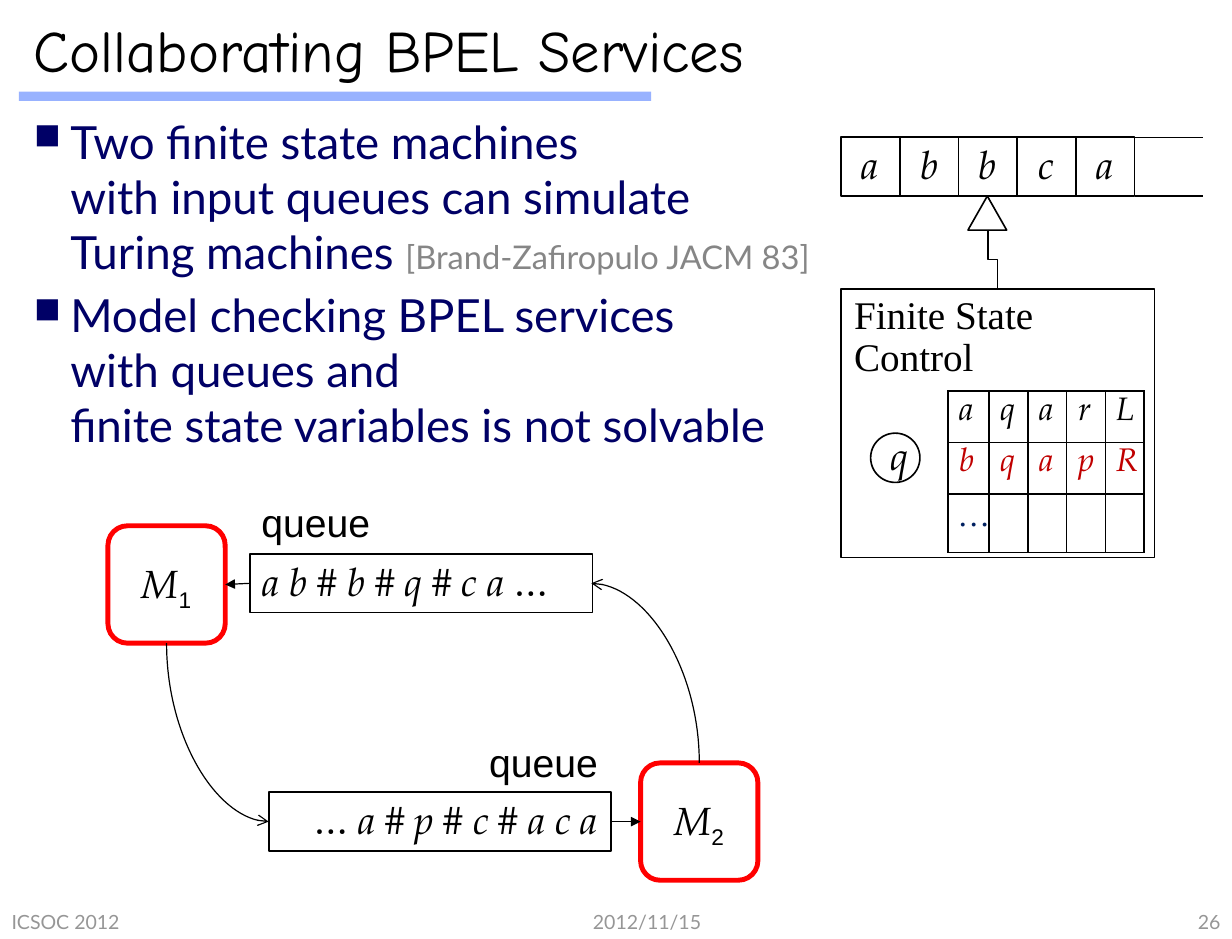
from lxml import etree
from pptx import Presentation
from pptx.dml.color import RGBColor
from pptx.enum.shapes import MSO_CONNECTOR, MSO_SHAPE
from pptx.enum.text import MSO_ANCHOR, PP_ALIGN
from pptx.oxml.ns import qn
from pptx.util import Inches, Pt

LEFT, CENTER, RIGHT = PP_ALIGN.LEFT, PP_ALIGN.CENTER, PP_ALIGN.RIGHT
TOP, MIDDLE = MSO_ANCHOR.TOP, MSO_ANCHOR.MIDDLE
RECT, ROUNDED = MSO_SHAPE.RECTANGLE, MSO_SHAPE.ROUNDED_RECTANGLE
OVAL, TRIANGLE = MSO_SHAPE.OVAL, MSO_SHAPE.ISOSCELES_TRIANGLE
STRAIGHT, ELBOW, CURVE = MSO_CONNECTOR.STRAIGHT, MSO_CONNECTOR.ELBOW, MSO_CONNECTOR.CURVE

COLORS = {"black": "000000", "white": "FFFFFF", "bar": "3366FF", "body": "000066",
          "citation": "868686", "footer": "969696", "machine": "FF0000",
          "active": "C00000", "more": "002060"}
COLORS = {name: RGBColor.from_string(value) for name, value in COLORS.items()}
MATH, SERIF, SANS, LATO = "TeX Gyre Pagella", "Times New Roman", "Arial", "Lato"

prs = Presentation()
prs.slide_width, prs.slide_height = Inches(10.5), Inches(8)
slide = prs.slides.add_slide(prs.slide_layouts[5])
shapes = slide.shapes


def write(p, runs, align=LEFT, hang=0, line_spacing=0.9):
    """Fill a paragraph with runs of (text, size, font, color, italic, baseline %)."""
    p.alignment = align
    p.line_spacing = line_spacing
    p.space_before = Pt(0.2 * runs[0][1])
    if hang:
        pPr = p._p.get_or_add_pPr()
        pPr.set("marL", str(Inches(hang)))
        pPr.set("indent", str(-Inches(hang)))
    for text, size, font, color, italic, baseline in runs:
        for i, part in enumerate(text.split("\n")):
            if i:
                p.add_line_break()
            r = p.add_run()
            r.text = part
            r.font.size, r.font.name, r.font.italic = Pt(size), font, italic
            r.font.color.rgb = COLORS[color]
            if baseline:
                r._r.get_or_add_rPr().set("baseline", str(baseline * 1000))


def connect(kind, x1, y1, x2, y2, tail=None):
    """Draw a connector; bent and curved ones leave and run vertically."""
    if kind == STRAIGHT:
        cx = shapes.add_connector(kind, Inches(x1), Inches(y1), Inches(x2), Inches(y2))
    else:
        mid_x, mid_y = (x1 + x2) / 2, (y1 + y2) / 2
        half_w, half_h = abs(y2 - y1) / 2, abs(x2 - x1) / 2
        cx = shapes.add_connector(kind, Inches(mid_x - half_w), Inches(mid_y - half_h),
                                  Inches(mid_x + half_w), Inches(mid_y + half_h))
        xfrm = cx._element.spPr.find(qn("a:xfrm"))
        xfrm.set("rot", "16200000")
        xfrm.set("flipH" if y2 > y1 else "flipV", "1")
        if kind == CURVE:
            cx._element.spPr.find(qn("a:prstGeom")).set("prst", "curvedConnector2")
    cx.line.color.rgb = COLORS["black"]
    cx.line.width = Pt(0.75)
    if tail:
        etree.SubElement(cx.line._get_or_add_ln(), qn("a:tailEnd"), type=tail)
    etree.SubElement(cx._element.spPr, qn("a:effectLst"))


# Title and its underline
bar = shapes.add_shape(RECT, Inches(0.16), Inches(0.78), Inches(5.39), Inches(0.08))
bar.shadow.inherit = False
bar.fill.solid()
bar.fill.fore_color.rgb = COLORS["bar"]
etree.SubElement(bar._element.spPr.find(".//" + qn("a:srgbClr")), qn("a:alpha"), val="50000")
bar.line.fill.background()

title = shapes.title
title.left, title.top, title.width, title.height = Inches(0.18), 0, Inches(10.15), Inches(0.83)
title.text_frame.vertical_anchor = MIDDLE
title.text_frame.margin_left = Inches(0.11)
write(title.text_frame.paragraphs[0],
      [("Collaborating BPEL Services", 36, "Comic Neue", "black", False, 0)], line_spacing=1)
title.text_frame.paragraphs[0].space_before = Pt(0)

# Bullets
tf = shapes.add_textbox(Inches(0.18), Inches(0.92), Inches(10.15), Inches(6.75)).text_frame
tf.word_wrap = True
tf.margin_left = tf.margin_right = Inches(0.11)
bullets = [
    [("Two finite state machines\nwith input queues can simulate\nTuring machines ",
      28, LATO, "body", False, 0),
     ("[Brand-Zafiropulo JACM 83]", 20, LATO, "citation", False, 0)],
    [("Model checking BPEL services\nwith queues and\nfinite state variables is not solvable",
      28, LATO, "body", False, 0)],
]
for i, runs in enumerate(bullets):
    p = tf.add_paragraph() if i else tf.paragraphs[0]
    write(p, runs, hang=0.31, line_spacing=1)
    pPr = p._p.get_or_add_pPr()
    color = etree.SubElement(pPr, qn("a:buClr"))
    etree.SubElement(color, qn("a:srgbClr"), val=str(COLORS["body"]))
    etree.SubElement(pPr, qn("a:buSzPct"), val="80000")
    etree.SubElement(pPr, qn("a:buChar"), char="■")

# Footer and queue labels
labels = [
    (4.42, 7.73, 2.19, 0.27, "2012/11/15", 12, LATO, "footer", CENTER, MIDDLE),
    (0, 7.73, 3.33, 0.27, "ICSOC 2012", 12, LATO, "footer", LEFT, MIDDLE),
    (8.31, 7.73, 2.19, 0.27, "26", 12, LATO, "footer", RIGHT, MIDDLE),
    (2.13, 4.24, 1.14, 0.46, "queue", 24, SANS, "black", LEFT, TOP),
    (4.07, 6.29, 1.14, 0.46, "queue", 24, SANS, "black", LEFT, TOP),
]
for x, y, w, h, text, size, font, color, align, anchor in labels:
    tf = shapes.add_textbox(Inches(x), Inches(y), Inches(w), Inches(h)).text_frame
    tf.word_wrap = False
    tf.vertical_anchor = anchor
    write(tf.paragraphs[0], [(text, size, font, color, False, 0)], align)
    if color == "footer":
        tf.paragraphs[0].space_before = Pt(0)

# Transition table
transitions = [("aqarL", MATH, "black", True), ("bqapR", MATH, "active", True),
               ("…", SERIF, "more", True)]
table = shapes.add_table(3, 5, Inches(8.08), Inches(3.33), Inches(1.67), Inches(1.38)).table
table.first_row = table.horz_banding = False
for col, width in zip(table.columns, [0.35] + [0.33] * 4):
    col.width = Inches(width)
for row, height in zip(table.rows, [0.44, 0.44, 0.5]):
    row.height = Inches(height)
for row, (symbols, font, color, italic) in zip(table.rows, transitions):
    for i, cell in enumerate(row.cells):
        cell.fill.solid()
        cell.fill.fore_color.rgb = COLORS["white"]
        tcPr = cell._tc.get_or_add_tcPr()
        for n, side in enumerate(("lnL", "lnR", "lnT", "lnB")):
            ln = etree.Element(qn("a:" + side), w=str(Pt(1)))
            fill = etree.SubElement(ln, qn("a:solidFill"))
            etree.SubElement(fill, qn("a:srgbClr"), val=str(COLORS["black"]))
            tcPr.insert(n, ln)
        if i < len(symbols):
            write(cell.text_frame.paragraphs[0], [(symbols[i], 20, font, color, italic, 0)])

# Tape, control unit, machines and queues
boxes = [(RECT, 7.17 + 0.5 * i, 1.17, 0.5, 0.5, CENTER, [(symbol, 24, MATH, "black", True, 0)])
         for i, symbol in enumerate("abbca")]
boxes += [
    (RECT, 7.17, 2.46, 2.67, 2.29, LEFT,
     [("Finite State\nControl", 24, SERIF, "black", False, 0)]),
    (TRIANGLE, 8.25, 1.67, 0.33, 0.29, CENTER, []),
    (OVAL, 7.42, 3.69, 0.42, 0.42, CENTER, [("q", 24, MATH, "black", True, 0)]),
    (RECT, 2.13, 4.72, 2.92, 0.5, LEFT,
     [("a b # b # q # c a ", 24, MATH, "black", True, 0), ("…", 24, MATH, "black", False, 0)]),
    (RECT, 2.29, 6.75, 2.92, 0.5, RIGHT,
     [("… ", 24, MATH, "black", False, 0), ("a # p # c # a c a", 24, MATH, "black", True, 0)]),
]
boxes += [(ROUNDED, x, y, 1, 1, CENTER,
           [("M", 24, MATH, "black", True, 0), (number, 24, SANS, "black", False, -25)])
          for x, y, number in [(0.92, 4.48, "1"), (5.46, 6.5, "2")]]
for kind, x, y, w, h, align, runs in boxes:
    sp = shapes.add_shape(kind, Inches(x), Inches(y), Inches(w), Inches(h))
    sp.shadow.inherit = False
    sp.fill.background()
    sp.line.color.rgb = COLORS["machine" if kind == ROUNDED else "black"]
    sp.line.width = Pt(3 if kind == ROUNDED else 1)
    if runs:
        control = h > 2
        tf = sp.text_frame
        tf.word_wrap = True
        tf.vertical_anchor = TOP if control else MIDDLE
        tf.margin_left = tf.margin_right = Inches(0.11)
        tf.margin_top = tf.margin_bottom = Inches(0.06)
        write(tf.paragraphs[0], runs, align, hang=0 if control else 0.32)

# Open end of the tape, tape head and message flow
for y in (1.17, 1.67):
    connect(STRAIGHT, 9.67, y, 10.25, y)
connect(ELBOW, 8.42, 1.96, 8.5, 2.46)
connect(CURVE, 5.96, 6.5, 5.04, 4.97, "arrow")
connect(CURVE, 1.42, 5.48, 2.29, 7, "arrow")
connect(STRAIGHT, 5.21, 7, 5.46, 7, "triangle")
connect(STRAIGHT, 2.13, 4.97, 1.92, 4.98, "triangle")

prs.save("out.pptx")
